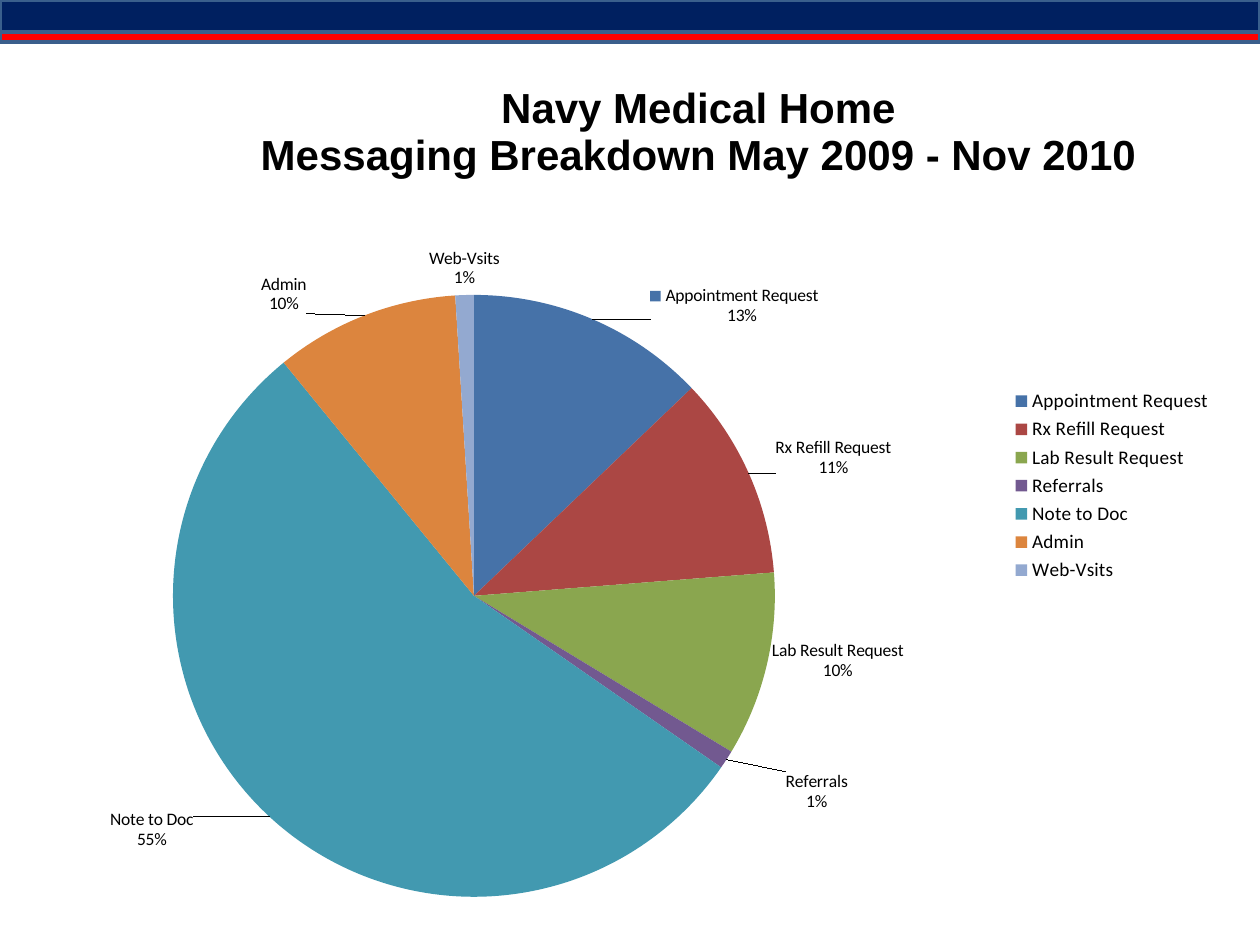
import pptx
import pptx.chart.data
import pptx.dml.color
import pptx.enum.chart
import pptx.enum.shapes
import pptx.oxml
import pptx.oxml.ns
import pptx.util

RGB = pptx.dml.color.RGBColor
NAVY = RGB(0x00, 0x20, 0x60)
RED = RGB(0xFF, 0x00, 0x00)
EDGE = RGB(0x3A, 0x5F, 0x8C)
BLACK = RGB(0x00, 0x00, 0x00)
BLUE = RGB(0x46, 0x72, 0xA8)
BRICK = RGB(0xAB, 0x47, 0x44)
GREEN = RGB(0x8A, 0xA6, 0x4F)
PURPLE = RGB(0x72, 0x59, 0x90)
TEAL = RGB(0x42, 0x99, 0xB0)
ORANGE = RGB(0xDC, 0x85, 0x3E)
PALE_BLUE = RGB(0x93, 0xA9, 0xD0)

PX = 914400 // 126
CHART_BOX = (32, 53, 1194, 867)
TITLE = ("Navy Medical Home", "Messaging Breakdown May 2009 - Nov 2010")

# category, percent, colour, label shift in px
SLICES = [
    ("Appointment Request", 13, BLUE, (55, 13)),
    ("Rx Refill Request", 11, BRICK, (20, 7)),
    ("Lab Result Request", 10, GREEN, (-2, -26)),
    ("Referrals", 1, PURPLE, (53, 8)),
    ("Note to Doc", 55, TEAL, (-71, -12)),
    ("Admin", 10, ORANGE, (-55, 5)),
    ("Web-Vsits", 1, PALE_BLUE, (0, 0)),
]


def chart_xml(markup):
    namespace = pptx.oxml.ns.nsdecls("c")
    return pptx.oxml.parse_xml(markup.replace(">", f" {namespace}>", 1))


def layout_xml(left, top, width=None, height=None, inner=False, edge=True):
    """Manual layout from px inside the chart; edge=False means a shift."""
    chart_width, chart_height = CHART_BOX[2:]
    parts = ['<c:layoutTarget val="inner"/>'] if inner else []
    if edge:
        parts += ['<c:xMode val="edge"/>', '<c:yMode val="edge"/>']
    sizes = (("x", left, chart_width), ("y", top, chart_height),
             ("w", width, chart_width), ("h", height, chart_height))
    parts += [f'<c:{tag} val="{value / whole:.4f}"/>'
              for tag, value, whole in sizes if value is not None]
    return chart_xml("<c:layout><c:manualLayout>" + "".join(parts)
                     + "</c:manualLayout></c:layout>")


def place_after(anchor, layout):
    for old in anchor.getparent().findall(pptx.oxml.ns.qn("c:layout")):
        old.getparent().remove(old)
    anchor.addnext(layout)


class Page:
    font = "Calibri"
    title_font = "Arial"

    def __init__(self, deck):
        self.slide = deck.slides.add_slide(deck.slide_layouts[6])

    def band(self, top, height, colour):
        shape = self.slide.shapes.add_shape(
            pptx.enum.shapes.MSO_SHAPE.RECTANGLE,
            0, top * PX, 1260 * PX, height * PX)
        shape.shadow.inherit = False
        shape.fill.solid()
        shape.fill.fore_color.rgb = colour
        shape.line.color.rgb = EDGE
        shape.line.width = pptx.util.Pt(2)

    def style(self, font, size, name=None, bold=False):
        font.name = name or self.font
        font.size = pptx.util.Pt(size)
        font.bold = bold
        font.color.rgb = BLACK

    def pie(self):
        data = pptx.chart.data.CategoryChartData()
        data.categories = [name for name, *_ in SLICES]
        data.add_series("Series 1", [percent for _, percent, *_ in SLICES])
        chart = self.slide.shapes.add_chart(
            pptx.enum.chart.XL_CHART_TYPE.PIE,
            *(length * PX for length in CHART_BOX), data).chart
        self.style(chart.font, 10)
        plot = chart.plots[0]
        plot.vary_by_categories = True
        for index, (_, _, colour, shift) in enumerate(SLICES):
            self.wedge(plot.series[0], index, colour, shift)
        plot_area = chart.element.find(".//" + pptx.oxml.ns.qn("c:plotArea"))
        for old in plot_area.findall(pptx.oxml.ns.qn("c:layout")):
            plot_area.remove(old)
        plot_area.insert(0, layout_xml(141, 242, 602, 602, inner=True))
        self.title(chart)
        self.legend(chart)

    def wedge(self, series, index, colour, shift):
        point = series.points[index]
        point.format.fill.solid()
        point.format.fill.fore_color.rgb = colour
        point.format.line.fill.background()
        label = point.data_label
        label.position = pptx.enum.chart.XL_LABEL_POSITION.OUTSIDE_END
        self.style(label.font, 10)
        node = next(found for found in
                    series.points[index].data_label.font and
                    series.format and
                    self.label_nodes(series)
                    if found.find(pptx.oxml.ns.qn("c:idx")).get("val")
                    == str(index))
        shown = {"showLegendKey": index == 0, "showVal": True,
                 "showCatName": True, "showPercent": False}
        for tag, visible in shown.items():
            node.find(pptx.oxml.ns.qn("c:" + tag)).set("val", str(int(visible)))
        node.append(chart_xml("<c:separator>\n</c:separator>"))
        node[0].addnext(chart_xml(
            "<c:numFmt formatCode='0\"%\"' sourceLinked='0'></c:numFmt>"))
        if any(shift):
            place_after(node[0], layout_xml(*shift, edge=False))

    def label_nodes(self, series):
        return series.data_labels._element.findall(pptx.oxml.ns.qn("c:dLbl"))

    def title(self, chart):
        chart.has_title = True
        frame = chart.chart_title.text_frame
        frame.text = "\n".join(TITLE)
        for para in frame.paragraphs:
            self.style(para.font, 24, self.title_font, bold=True)
        chart.chart_title.include_in_layout = False
        node = chart.element.find(".//" + pptx.oxml.ns.qn("c:title"))
        place_after(node.find(pptx.oxml.ns.qn("c:tx")), layout_xml(225, 26))

    def legend(self, chart):
        chart.has_legend = True
        legend = chart.legend
        legend.position = pptx.enum.chart.XL_LEGEND_POSITION.RIGHT
        legend.include_in_layout = False
        self.style(legend.font, 11)
        node = chart.element.find(".//" + pptx.oxml.ns.qn("c:legend"))
        place_after(node.find(pptx.oxml.ns.qn("c:legendPos")),
                    layout_xml(980, 332, 200, 202))


def main():
    deck = pptx.Presentation()
    deck.slide_width = 1260 * PX
    deck.slide_height = 945 * PX
    page = Page(deck)
    page.band(0, 32, NAVY)
    page.band(32, 10, RED)
    page.pie()
    deck.save("out.pptx")


if __name__ == "__main__":
    main()
